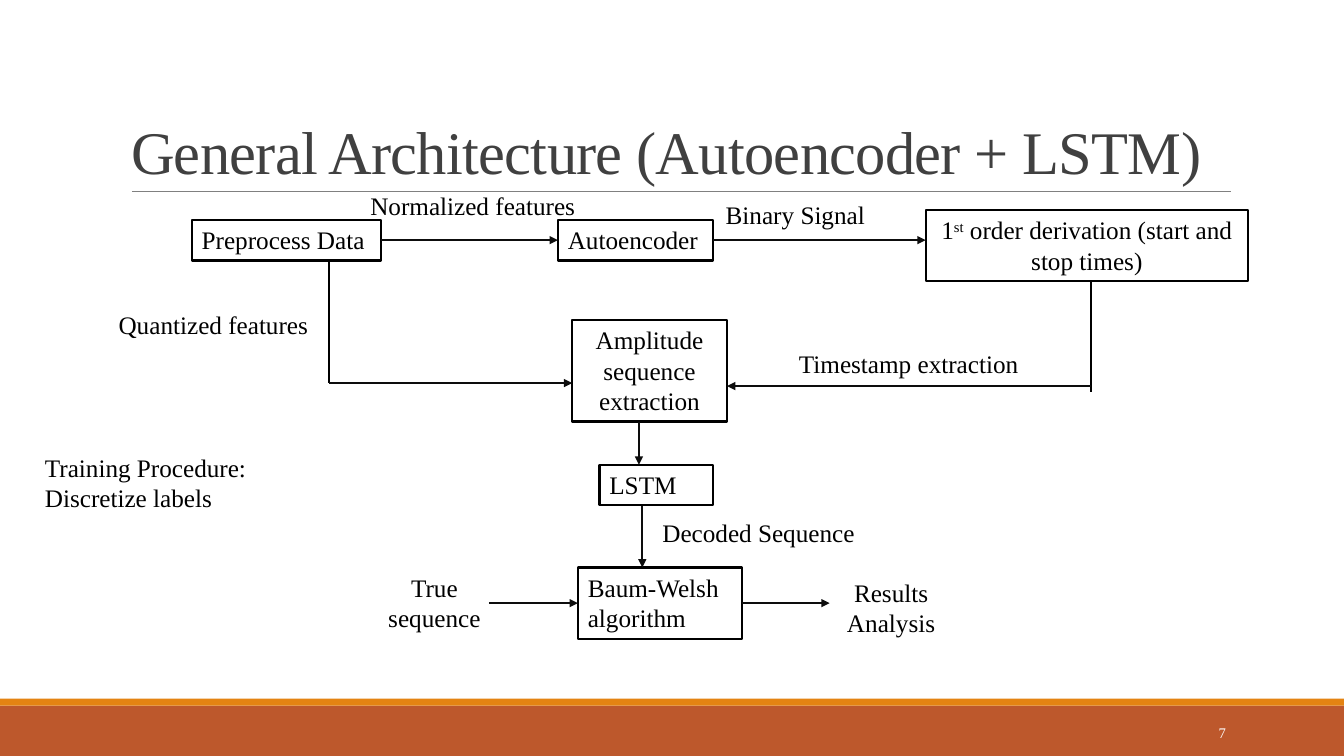
import pptx
import pptx.dml.color
import pptx.enum.shapes
import pptx.enum.text
import pptx.oxml
import pptx.oxml.ns
import pptx.util

Pt = pptx.util.Pt
ALIGN = pptx.enum.text.PP_ALIGN
ANCHOR = pptx.enum.text.MSO_ANCHOR
SHAPE = pptx.enum.shapes.MSO_SHAPE
FONT = "Times New Roman"
COLORS = {
    "ink": "000000",
    "arrow": "0D0D0D",
    "title": "404040",
    "rule": "808080",
    "band": "BD582C",
    "stripe": "E48312",
    "white": "FFFFFF",
}

TITLE = "General Architecture (Autoencoder + LSTM)"
PAGE_NUMBER = "7"
ONE_LINE, TWO_LINES, THREE_LINES = 29.08, 50.9, 72.7

BOXES = {
    "preprocess": (["Preprocess Data"], 137, 157, 135.2, ONE_LINE, ALIGN.LEFT),
    "autoencoder": (["Autoencoder"], 398.5, 157, 110.6, ONE_LINE, ALIGN.LEFT),
    "derivation": (["1", "st", " order derivation (start and stop times)"],
                   661.2, 149.8, 230.2, TWO_LINES, ALIGN.CENTER),
    "amplitude": (["Amplitude sequence extraction"], 408.7, 228.4, 110.6, THREE_LINES, ALIGN.CENTER),
    "lstm": (["LSTM"], 428.2, 332, 81.2, ONE_LINE, ALIGN.LEFT),
    "baum_welsh": (["Baum-Welsh algorithm"], 412.8, 405.4, 117, TWO_LINES, ALIGN.LEFT),
}
LABELS = [
    (["True sequence"], 266.4, 405.4, 87.8, TWO_LINES, ALIGN.CENTER),
    (["Normalized features"], 249.5, 132.4, 176.4, ONE_LINE, ALIGN.CENTER),
    (["Binary Signal"], 479.9, 138.7, 176.4, ONE_LINE, ALIGN.CENTER),
    (["Quantized features"], 64.2, 217.6, 176.4, ONE_LINE, ALIGN.CENTER),
    (["Timestamp extraction"], 560.9, 245.2, 176.4, ONE_LINE, ALIGN.CENTER),
    (["Decoded Sequence"], 453.6, 366.1, 176.4, ONE_LINE, ALIGN.CENTER),
    (["Results Analysis"], 592.6, 409, 87.8, TWO_LINES, ALIGN.CENTER),
    (["Training Procedure:\nDiscretize labels"], 25, 319.7, 223.2, TWO_LINES, ALIGN.LEFT),
]


def rgb(name):
    return pptx.dml.color.RGBColor.from_string(COLORS[name])


def left(name):
    return BOXES[name][1]


def top(name):
    return BOXES[name][2]


def right(name):
    return left(name) + BOXES[name][3]


def bottom(name):
    return top(name) + BOXES[name][4]


def middle(name):
    return (top(name) + bottom(name)) / 2


def style_paragraph(paragraph, size, color, alignment):
    paragraph.alignment = alignment
    paragraph.font.name = FONT
    paragraph.font.size = Pt(size)
    paragraph.font.color.rgb = rgb(color)


def add_bar(slide, y, height, color):
    bar = slide.shapes.add_shape(SHAPE.RECTANGLE, 0, Pt(y), Pt(960), Pt(height))
    bar.shadow.inherit = False
    bar.fill.solid()
    bar.fill.fore_color.rgb = rgb(color)
    bar.line.fill.background()


def add_text(slide, pieces, x, y, width, height, alignment, size=18, color="ink"):
    shape = slide.shapes.add_textbox(Pt(x), Pt(y), Pt(width), Pt(height))
    frame = shape.text_frame
    frame.word_wrap = True
    if len(pieces) == 1:
        frame.text = pieces[0]
    else:
        for piece in pieces:
            run = frame.paragraphs[0].add_run()
            run.text = piece
            if piece == "st":
                run._r.get_or_add_rPr().set("baseline", "30000")
    for paragraph in frame.paragraphs:
        style_paragraph(paragraph, size, color, alignment)
    return shape


def add_line(slide, start, end, color, width=1.5, arrow=False):
    line = slide.shapes.add_connector(
        pptx.enum.shapes.MSO_CONNECTOR.STRAIGHT, *(Pt(value) for value in start + end))
    line.line.color.rgb = rgb(color)
    line.line.width = Pt(width)
    if arrow:
        head = pptx.oxml.parse_xml(
            f'<a:tailEnd {pptx.oxml.ns.nsdecls("a")} type="triangle"/>')
        line.line._get_or_add_ln().append(head)
    line._element.spPr.append(
        pptx.oxml.parse_xml(f'<a:effectLst {pptx.oxml.ns.nsdecls("a")}/>'))


def add_title(slide):
    title = slide.shapes.title
    title.left, title.top, title.width, title.height = Pt(86.4), Pt(91.4), Pt(792), Pt(45.4)
    frame = title.text_frame
    frame.text = TITLE
    frame.word_wrap = True
    frame.auto_size = pptx.enum.text.MSO_AUTO_SIZE.NONE
    frame.vertical_anchor = ANCHOR.BOTTOM
    paragraph = frame.paragraphs[0]
    style_paragraph(paragraph, 43.2, "title", ALIGN.LEFT)
    paragraph.line_spacing = 0.85
    paragraph.runs[0]._r.get_or_add_rPr().set("spc", "-50")


def main():
    presentation = pptx.Presentation()
    presentation.slide_width, presentation.slide_height = Pt(960), Pt(540)
    slide = presentation.slides.add_slide(presentation.slide_layouts[5])

    add_bar(slide, 504, 36, "band")
    add_bar(slide, 499, 5, "stripe")
    add_line(slide, (94.3, 136.6), (879, 136.6), "rule", 0.5)
    add_title(slide)
    number = add_text(slide, [PAGE_NUMBER], 779.8, 508.6, 103, 28.8, ALIGN.RIGHT, 10.5, "white")
    number.text_frame.vertical_anchor = ANCHOR.MIDDLE

    for box in BOXES.values():
        shape = add_text(slide, *box)
        shape.line.color.rgb = rgb("ink")
        shape.line.width = Pt(1.5)
    for label in LABELS:
        add_text(slide, *label)

    first_row, last_row = middle("preprocess"), middle("baum_welsh")
    quantized_x, quantized_y = 235.2, 273.6
    timestamp_x, timestamp_y = 779.4, 275.8
    add_line(slide, (quantized_x, bottom("preprocess")), (quantized_x, quantized_y), "ink")
    add_line(slide, (timestamp_x, bottom("derivation")), (timestamp_x, 280), "ink")
    arrows = [
        ((right("preprocess"), first_row), (left("autoencoder"), first_row)),
        ((right("autoencoder"), first_row), (left("derivation"), first_row)),
        ((quantized_x, quantized_y), (left("amplitude"), quantized_y)),
        ((timestamp_x, timestamp_y), (right("amplitude"), timestamp_y)),
        ((456.4, bottom("amplitude")), (456.4, top("lstm"))),
        ((458.8, bottom("lstm")), (458.8, top("baum_welsh"))),
        ((349.2, last_row), (left("baum_welsh"), last_row)),
        ((right("baum_welsh"), last_row), (592.6, last_row)),
    ]
    for start, end in arrows:
        add_line(slide, start, end, "arrow", arrow=True)

    presentation.save("out.pptx")


if __name__ == "__main__":
    main()
